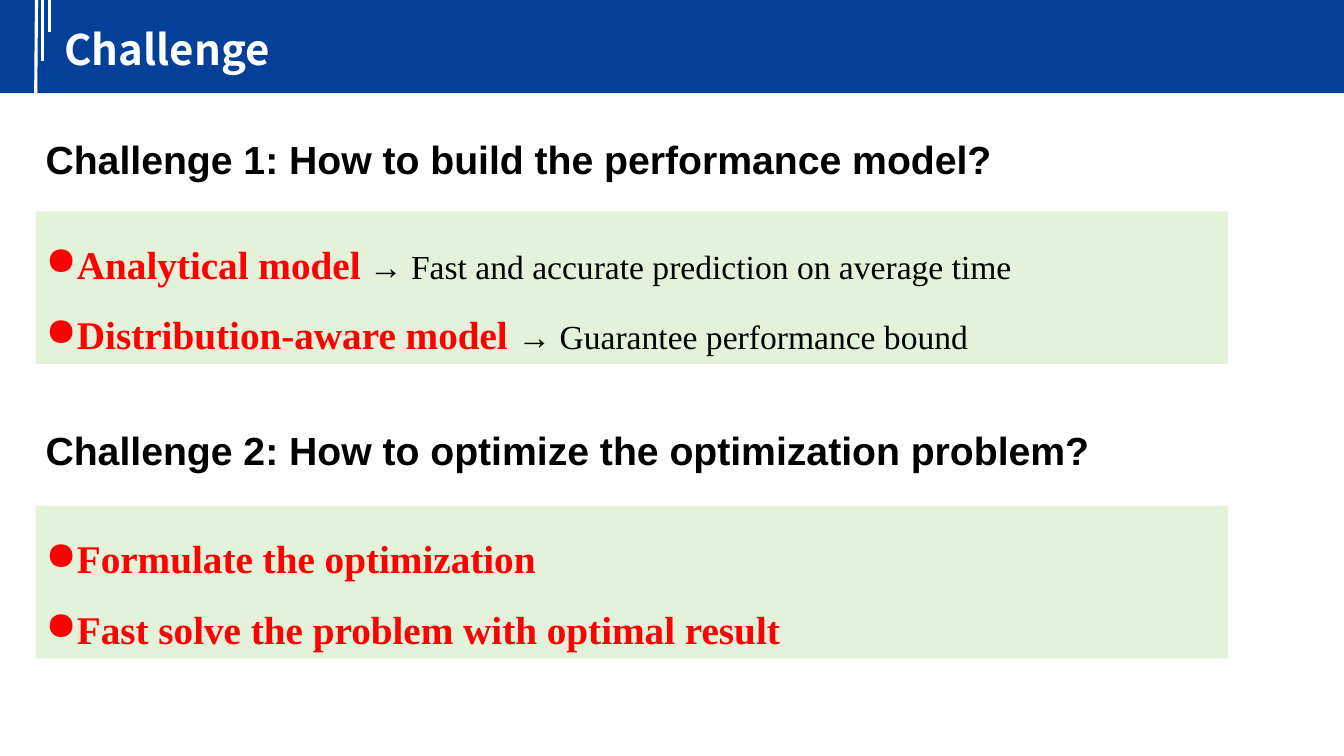
from lxml import etree
from pptx import Presentation
from pptx.dml.color import RGBColor
from pptx.enum import shapes, text
from pptx.oxml import ns
from pptx.util import Cm, Pt

BLUE = RGBColor(0x02, 0x40, 0x9A)
GREEN = RGBColor(0xE3, 0xF2, 0xD9)
RED = RGBColor(0xFF, 0, 0)
BLACK = RGBColor(0, 0, 0)
WHITE = RGBColor(0xFF, 0xFF, 0xFF)

deck = Presentation()
deck.slide_width, deck.slide_height = Cm(33.87), Cm(19.05)
slide = deck.slides.add_slide(deck.slide_layouts[6])


def add_block(left, top, width, height, fill=None):
    if fill is None:
        block = slide.shapes.add_textbox(Cm(left), Cm(top), Cm(width), Cm(height))
    else:
        block = slide.shapes.add_shape(
            shapes.MSO_SHAPE.RECTANGLE, Cm(left), Cm(top), Cm(width), Cm(height))
        block.shadow.inherit = False
        block.fill.solid()
        block.fill.fore_color.rgb = fill
        block.line.fill.background()
    block.text_frame.word_wrap = True
    block.text_frame.vertical_anchor = text.MSO_ANCHOR.TOP
    return block.text_frame


def add_run(paragraph, wording, font, size, color, bold=True):
    run = paragraph.add_run()
    run.text = wording
    run.font.name = font
    run.font.size = Pt(size)
    run.font.color.rgb = color
    run.font.bold = bold


add_block(0, -0.05, 33.87, 2.4, BLUE)

for start, end, length in [(0.92, 0.9, 2.34), (1.07, 1.07, 1.53), (1.25, 1.25, 0.81)]:
    stripe = slide.shapes.add_connector(
        shapes.MSO_CONNECTOR.STRAIGHT, Cm(start), Cm(0), Cm(end), Cm(length))
    stripe.line.color.rgb = WHITE
    stripe.line.width = Pt(2.25)
    etree.SubElement(stripe._element.spPr, ns.qn("a:effectLst"))

title = add_block(1.37, 0.46, 23.16, 1.52)
title.margin_top = title.margin_bottom = 0
title.vertical_anchor = text.MSO_ANCHOR.MIDDLE
add_run(title.paragraphs[0], "Challenge", "Noto Sans CJK SC", 30, WHITE)

challenges = [
    (3.28, "Challenge 1: How to build the performance model?", 5.33, [
        ("Analytical model", " → Fast and accurate prediction on average time"),
        ("Distribution-aware model ", "→ Guarantee performance bound"),
    ]),
    (10.62, "Challenge 2: How to optimize the optimization problem?", 12.75, [
        ("Formulate the optimization", ""),
        ("Fast solve the problem with optimal result", ""),
    ]),
]

for question_top, question, panel_top, answers in challenges:
    heading = add_block(0.9, question_top, 28.55, 1.45)
    add_run(heading.paragraphs[0], question, "Arial", 28, BLACK)

    panel = add_block(0.9, panel_top, 30.05, 3.84, GREEN)
    for index, (approach, benefit) in enumerate(answers):
        item = panel.paragraphs[0] if index == 0 else panel.add_paragraph()
        item.alignment = text.PP_ALIGN.LEFT
        item.line_spacing = 1.5
        properties = item._p.get_or_add_pPr()
        properties.set("marL", str(Cm(0.79)))
        properties.set("indent", str(-Cm(0.79)))
        etree.SubElement(properties, ns.qn("a:buChar"), char="●")
        add_run(item, approach, "Times New Roman", 28, RED)
        if benefit:
            add_run(item, benefit, "Times New Roman", 24, BLACK, False)

deck.save("out.pptx")
